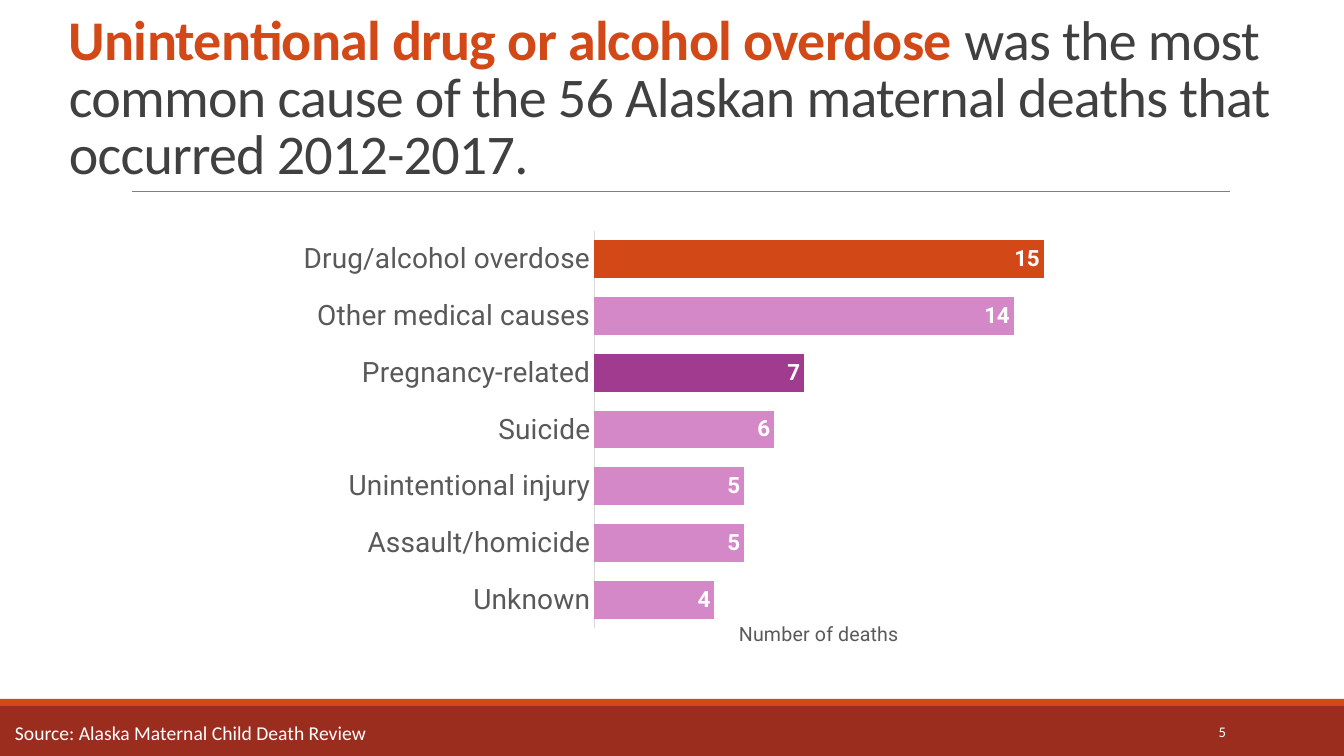
from lxml import etree
from pptx import Presentation
from pptx.chart.data import CategoryChartData
from pptx.dml.color import RGBColor
from pptx.enum.chart import XL_CHART_TYPE, XL_LABEL_POSITION, XL_TICK_LABEL_POSITION, XL_TICK_MARK
from pptx.enum.shapes import MSO_CONNECTOR, MSO_SHAPE
from pptx.enum.text import MSO_ANCHOR, PP_ALIGN
from pptx.oxml import parse_xml
from pptx.oxml.ns import nsdecls, qn
from pptx.util import Pt

BAR_CLUSTERED = XL_CHART_TYPE.BAR_CLUSTERED
INSIDE_END = XL_LABEL_POSITION.INSIDE_END
NO_LABELS = XL_TICK_LABEL_POSITION.NONE
NO_TICKS = XL_TICK_MARK.NONE
STRAIGHT = MSO_CONNECTOR.STRAIGHT
RECTANGLE = MSO_SHAPE.RECTANGLE
TOP, MIDDLE, BOTTOM = MSO_ANCHOR.TOP, MSO_ANCHOR.MIDDLE, MSO_ANCHOR.BOTTOM
LEFT, RIGHT = PP_ALIGN.LEFT, PP_ALIGN.RIGHT

ORANGE = RGBColor(0xD3, 0x48, 0x17)
BRICK = RGBColor(0x9B, 0x2D, 0x1F)
PINK = RGBColor(0xD4, 0x88, 0xC7)
PURPLE = RGBColor(0xA1, 0x3B, 0x90)
WHITE = RGBColor(0xFF, 0xFF, 0xFF)
INK = RGBColor(0x40, 0x40, 0x40)
LABEL_GREY = RGBColor(0x59, 0x59, 0x59)
AXIS_GREY = RGBColor(0xD9, 0xD9, 0xD9)
RULE_GREY = RGBColor(0x80, 0x80, 0x80)

# Content: the title runs, and the causes from bottom bar to top bar
HEADLINE = [
    ("Unintentional drug or alcohol overdose ", ORANGE, True),
    ("was the most common cause of the 56 Alaskan maternal deaths that occurred 2012-2017.", INK, False),
]
CAUSES = [
    ("Unknown", 4, PINK),
    ("Assault/homicide", 5, PINK),
    ("Unintentional injury", 5, PINK),
    ("Suicide", 6, PINK),
    ("Pregnancy-related", 7, PURPLE),
    ("Other medical causes", 14, PINK),
    ("Drug/alcohol overdose", 15, ORANGE),
]
AXIS_TITLE = "Number of deaths"
SOURCE_NOTE = "Source: Alaska Maternal Child Death Review"
PAGE_NUMBER = "5"

# Boxes in px: left, top, width, height
SLIDE_W, SLIDE_H = 1344, 756
BANDS = [((0, 706, SLIDE_W, 50), BRICK), ((0, 699, SLIDE_W, 7), ORANGE)]
RULE_LEFT, RULE_RIGHT, RULE_Y = 132, 1230, 191
HEADLINE_BOX = (59, 31, 1231, 160)
CHART_BOX = (-31, 209, 1109, 444)
PLOT_BOX = (564, 231, 479, 398)
AXIS_TITLE_AT = (735, 618)
PAGE_BOX = (1092, 712, 144, 40)
SOURCE_BOX = (5, 716, 375, 34)


def px(length):
    return round(length * 914400 / 100.8)


def style(font, size, color, name, bold=False):
    font.size, font.name, font.bold = Pt(size), name, bold
    font.color.rgb = color


def add_text(slide, box, runs, size, anchor=TOP, align=LEFT, wrap=True):
    frame = slide.shapes.add_textbox(*map(px, box)).text_frame
    frame.word_wrap, frame.vertical_anchor = wrap, anchor
    paragraph = frame.paragraphs[0]
    paragraph.alignment = align
    for words, color, bold in runs:
        run = paragraph.add_run()
        run.text = words
        style(run.font, size, color, "Calibri", bold)
    return paragraph


def manual_layout(place, inner=False):
    """Chart layout element from px on the slide, as fractions of the chart."""
    left, top, width, height = CHART_BOX
    parts = {"layoutTarget": "inner"} if inner else {}
    parts.update(xMode="edge", yMode="edge",
                 x=round((place[0] - left) / width, 3), y=round((place[1] - top) / height, 3))
    if inner:
        parts.update(w=round(place[2] / width, 3), h=round(place[3] / height, 3))
    layout = parse_xml(f"<c:layout {nsdecls('c')}><c:manualLayout/></c:layout>")
    for tag, value in parts.items():
        etree.SubElement(layout[0], qn(f"c:{tag}")).set("val", str(value))
    return layout


def add_causes_chart(slide):
    causes_data = CategoryChartData()
    causes_data.categories = [cause for cause, _, _ in CAUSES]
    causes_data.add_series("Series 1", [deaths for _, deaths, _ in CAUSES])
    chart = slide.shapes.add_chart(BAR_CLUSTERED, *map(px, CHART_BOX), causes_data).chart
    chart.has_legend = chart.has_title = False
    chart.font.name, chart.font.size = "Roboto", Pt(12)

    # Bars and their labels
    plot = chart.plots[0]
    plot.gap_width, plot.vary_by_categories = 50, False
    plot.has_data_labels = True
    labels = plot.data_labels
    labels.show_value, labels.position = True, INSIDE_END
    style(labels.font, 16, WHITE, "Roboto", True)
    bars = plot.series[0]
    bars.invert_if_negative = False
    for index, (_, _, color) in enumerate(CAUSES):
        fill = bars.points[index].format.fill
        fill.solid()
        fill.fore_color.rgb = color

    # Axes
    cause_axis, death_axis = chart.category_axis, chart.value_axis
    for axis, size in ((cause_axis, 20), (death_axis, 12)):
        axis.major_tick_mark = axis.minor_tick_mark = NO_TICKS
        axis.has_major_gridlines = False
        style(axis.tick_labels.font, size, LABEL_GREY, "Roboto")
    cause_axis.format.line.color.rgb = AXIS_GREY
    cause_axis.format.line.width = Pt(0.75)
    death_axis.minimum_scale, death_axis.maximum_scale = -1, 15
    death_axis.tick_label_position = NO_LABELS
    death_axis.format.line.fill.background()
    title = death_axis.axis_title
    run = title.text_frame.paragraphs[0].add_run()
    run.text = AXIS_TITLE
    style(run.font, 14, LABEL_GREY, "Roboto")

    # Fixed places for the plot and the axis title
    plot_area = chart.element.find(f".//{qn('c:plotArea')}")
    for parent, layout in ((plot_area, manual_layout(PLOT_BOX, True)),
                           (title.element, manual_layout(AXIS_TITLE_AT))):
        for default in parent.findall(qn("c:layout")):
            parent.remove(default)
        if parent is plot_area:
            parent.insert(0, layout)
        else:
            parent.find(qn("c:tx")).addnext(layout)


def main():
    deck = Presentation()
    deck.slide_width, deck.slide_height = px(SLIDE_W), px(SLIDE_H)
    slide = deck.slides.add_slide(deck.slide_layouts[6])

    # Footer bands and the rule under the title
    for box, color in BANDS:
        band = slide.shapes.add_shape(RECTANGLE, *map(px, box))
        band.shadow.inherit = False
        band.fill.solid()
        band.fill.fore_color.rgb = color
        band.line.fill.background()
    rule = slide.shapes.add_connector(STRAIGHT, *map(px, (RULE_LEFT, RULE_Y, RULE_RIGHT, RULE_Y)))
    rule.line.color.rgb, rule.line.width = RULE_GREY, Pt(0.5)
    etree.SubElement(rule.element.spPr, qn("a:effectLst"))

    # Title, with slightly tightened letters
    headline = add_text(slide, HEADLINE_BOX, HEADLINE, 40, BOTTOM)
    headline.line_spacing = 0.85
    for run in headline.runs:
        run.font.element.set("spc", "-50") if hasattr(run.font, "element") else \
            run._r.get_or_add_rPr().set("spc", "-50")

    add_causes_chart(slide)

    # Footer
    add_text(slide, PAGE_BOX, [(PAGE_NUMBER, WHITE, False)], 10.5, MIDDLE, RIGHT)
    add_text(slide, SOURCE_BOX, [(SOURCE_NOTE, WHITE, False)], 14, wrap=False)
    deck.save("out.pptx")


if __name__ == "__main__":
    main()
